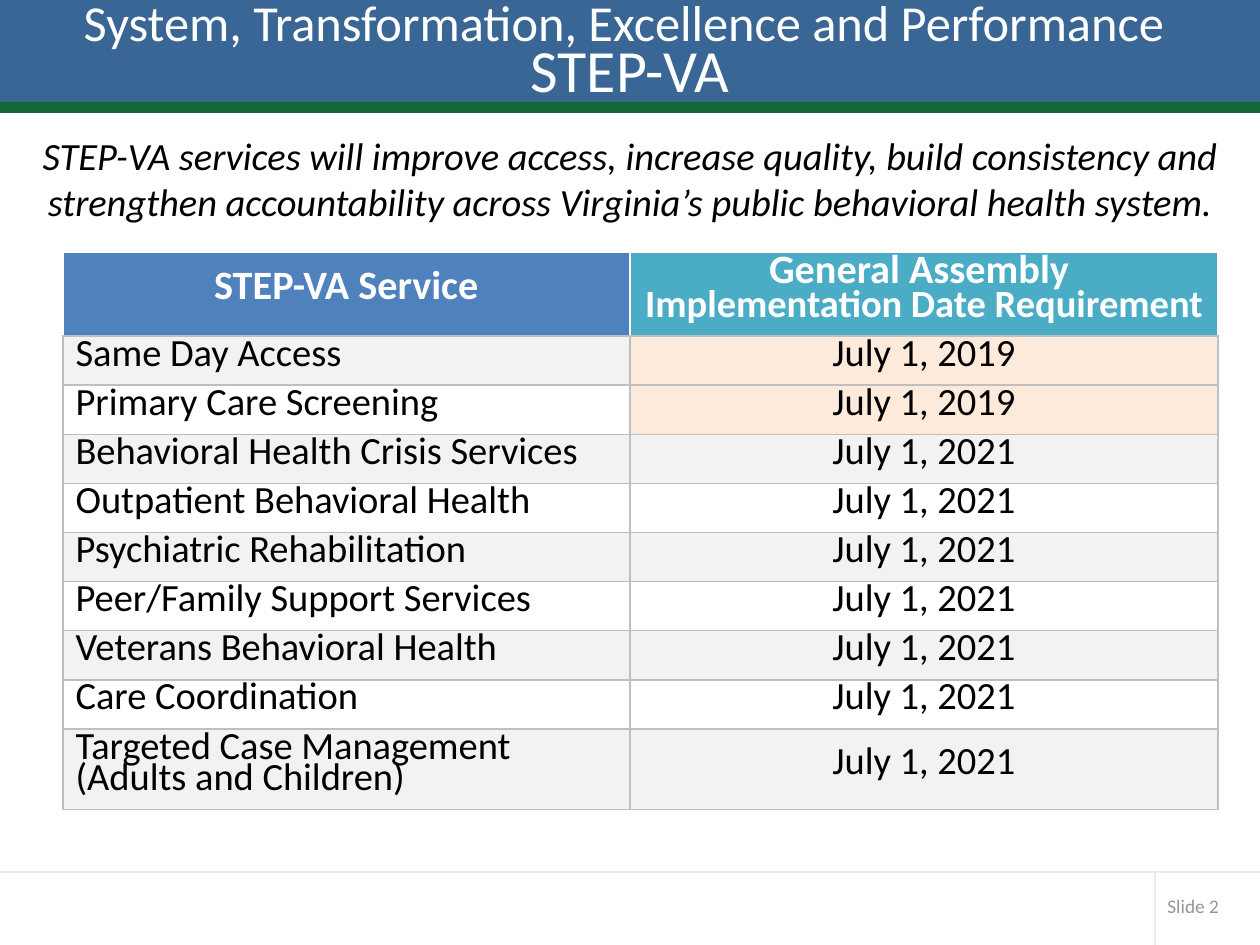
from lxml import etree
from pptx import Presentation
from pptx import util as u
from pptx.dml.color import RGBColor
from pptx.enum import shapes, text
from pptx.oxml.ns import qn

PX = u.Inches(1) // 126


class Theme:
    font = "Calibri"
    blue, green, rule = "3A6695", "136735", "EEECE1"
    heads = ("4F81BD", "4BACC6")
    band, done, edge = "F2F2F2", "FDEADA", "BFBFBF"
    white, black, grey = "FFFFFF", "000000", "969696"
    top, name, lead, head, cell, foot = 28.8, 34.2, 22, 23, 22, 11


def style(para, size, color, bold=False, italic=False):
    font = para.font
    font.name, font.size = Theme.font, u.Pt(size)
    font.bold, font.italic = bold, italic
    font.color.rgb = RGBColor.from_string(color)


def fill_para(para, lines, sizes, gap):
    """Write lines split by soft breaks, with an exact line height in points."""
    para.line_spacing = u.Pt(gap)
    for i, line in enumerate(lines):
        if i:
            para.add_line_break()
        run = para.add_run()
        run.text = line
        if len(set(sizes)) > 1:
            run.font.size = u.Pt(sizes[i])


deck = Presentation()
deck.slide_width, deck.slide_height = 1260 * PX, 945 * PX
slide = deck.slides.add_slide(deck.slide_layouts[1])
tree = slide.shapes

# Banner and footer
for y, h, color in ((0, 104, Theme.blue), (104, 7, Theme.green)):
    bar = tree.add_shape(shapes.MSO_SHAPE.RECTANGLE, 0, y * PX, 1260 * PX, h * PX)
    bar.shadow.inherit = False
    bar.fill.solid()
    bar.fill.fore_color.rgb = RGBColor.from_string(color)
    bar.line.color.rgb = RGBColor.from_string(color)
    bar.line.width = u.Pt(2)

for ends in ((0, 872, 1260, 872), (1155, 872, 1155, 945)):
    rule = tree.add_connector(shapes.MSO_CONNECTOR.STRAIGHT, *(n * PX for n in ends))
    rule.line.color.rgb = RGBColor.from_string(Theme.rule)
    rule.line.width = u.Pt(1)
    etree.SubElement(rule._element.spPr, qn("a:effectLst"))

foot = tree.add_textbox(1155 * PX, 887 * PX, 93 * PX, 37 * PX).text_frame
foot.word_wrap = True
foot.vertical_anchor = text.MSO_ANCHOR.MIDDLE
foot.text = "Slide 2"
style(foot.paragraphs[0], Theme.foot, Theme.grey)

# Service table
heads = (["STEP-VA Service"],
         ["General Assembly ", "Implementation Date Requirement"])
rows = [
    (["Same Day Access"], 2019),
    (["Primary Care Screening"], 2019),
    (["Behavioral Health Crisis Services"], 2021),
    (["Outpatient Behavioral Health"], 2021),
    (["Psychiatric Rehabilitation"], 2021),
    (["Peer/Family Support Services"], 2021),
    (["Veterans Behavioral Health"], 2021),
    (["Care Coordination"], 2021),
    (["Targeted Case Management ", "(Adults and Children)"], 2021),
]
grid = [heads] + [(name, [f"July 1, {year}"]) for name, year in rows]
highs = [82] + [48] * 8 + [80]
table = tree.add_table(len(grid), 2, 63 * PX, 252 * PX,
                       1155 * PX, sum(highs) * PX).table
table.first_row = table.horz_banding = False
for col, wide in zip(table.columns, (567, 588)):
    col.width = wide * PX

for r, line in enumerate(grid):
    table.rows[r].height = highs[r] * PX
    for c, words in enumerate(line):
        cell = table.cell(r, c)
        cell.vertical_anchor = text.MSO_ANCHOR.MIDDLE
        cell.margin_left = cell.margin_right = u.Inches(0.1)
        cell.margin_top = cell.margin_bottom = u.Inches(0.07)
        para = cell.text_frame.paragraphs[0]
        if r == 0:
            fill = Theme.heads[c]
            fill_para(para, words, (Theme.head, Theme.cell), 19)
            style(para, Theme.head, Theme.white, bold=True)
        else:
            fill = Theme.band if r % 2 else None
            if c == 1 and rows[r - 1][1] == 2019:
                fill = Theme.done
            fill_para(para, words, (Theme.cell,), 18)
            style(para, Theme.cell, Theme.black)
        if r == 0 or c == 1:
            para.alignment = text.PP_ALIGN.CENTER

        props = cell._tc.get_or_add_tcPr()
        for side in "LRTB":
            edge = etree.SubElement(props, qn(f"a:ln{side}"), w=str(u.Pt(1)))
            paint = etree.SubElement(edge, qn("a:solidFill"))
            color = Theme.white if r == 0 and side != "B" else Theme.edge
            etree.SubElement(paint, qn("a:srgbClr"), val=color)
        if fill:
            cell.fill.solid()
            cell.fill.fore_color.rgb = RGBColor.from_string(fill)
        else:
            cell.fill.background()

# Title and lead sentence, raised above the banner
title, lead = tree.title, slide.placeholders[1]
for box, y, h in ((title, 0, 104), (lead, 126, 189)):
    box.left, box.top, box.width, box.height = 0, y * PX, 1260 * PX, h * PX
    box.text_frame.auto_size = text.MSO_AUTO_SIZE.NONE
    box.text_frame.word_wrap = True
    box.text_frame.paragraphs[0].alignment = text.PP_ALIGN.CENTER
    tree._spTree.append(box._element)

title.text_frame.vertical_anchor = text.MSO_ANCHOR.MIDDLE
para = title.text_frame.paragraphs[0]
fill_para(para, ["System, Transformation, Excellence and Performance ", "STEP-VA"],
          (Theme.top, Theme.name), 30)
style(para, Theme.top, Theme.white)

para = lead.text_frame.paragraphs[0]
para.add_run().text = (
    "STEP-VA services will improve access, increase quality, build consistency and "
    "strengthen accountability across Virginia’s public behavioral health system.")
props = para._p.get_or_add_pPr()
props.set("marL", "0")
props.set("indent", "0")
etree.SubElement(props, qn("a:buNone"))
style(para, Theme.lead, Theme.black, italic=True)

deck.save("out.pptx")
